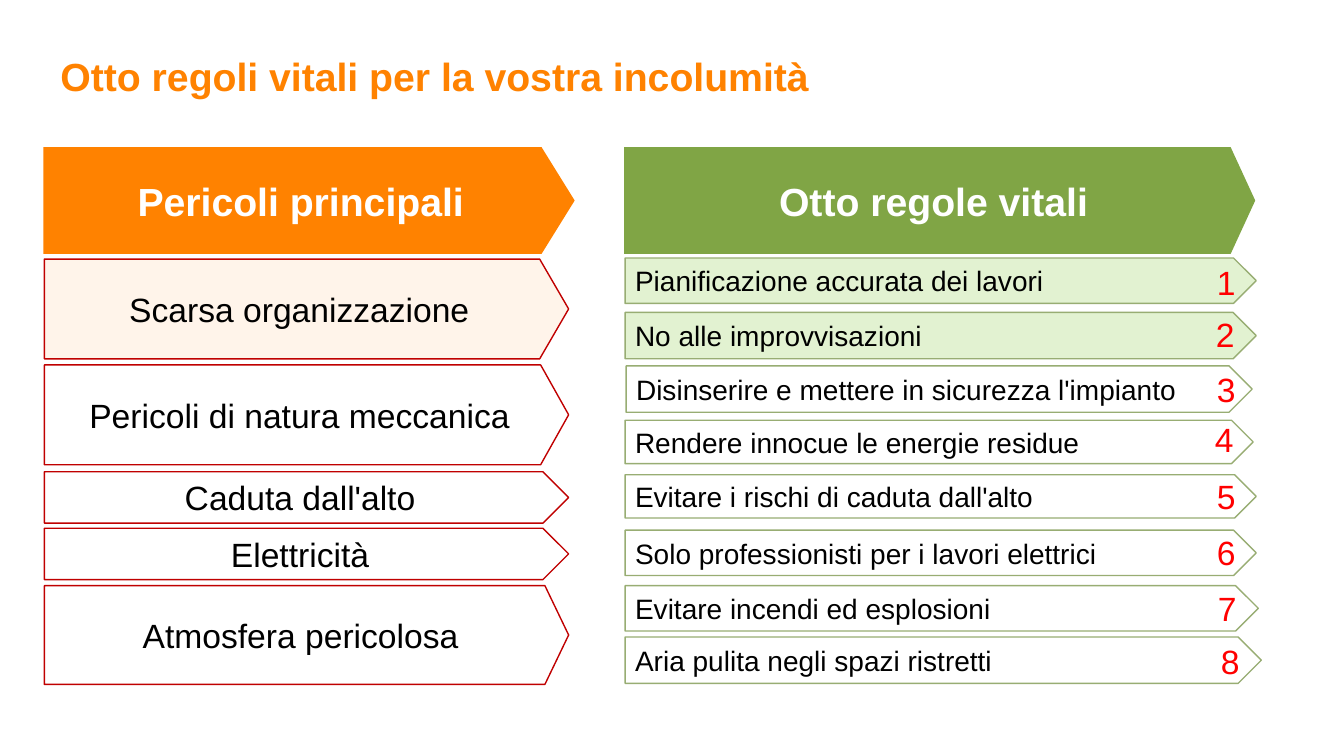
from pptx import Presentation
from pptx.dml.color import RGBColor
from pptx.enum.shapes import MSO_SHAPE
from pptx.enum.text import MSO_ANCHOR, PP_ALIGN
from pptx.util import Pt
from lxml import etree

PENTAGON = MSO_SHAPE.PENTAGON
MIDDLE, TOP = MSO_ANCHOR.MIDDLE, MSO_ANCHOR.TOP
LEFT, CENTER = PP_ALIGN.LEFT, PP_ALIGN.CENTER
PX = 9144  # 100 px to the inch
HANGING = 39 * PX
DRAWING_NS = "{http://schemas.openxmlformats.org/drawingml/2006/main}"

THEME = {
    "font": "Arial",
    "title_size": 28, "danger_size": 24, "rule_size": 20, "number_size": 24,
    "orange": "FF8200", "green": "80A545", "white": "FFFFFF", "black": "000000",
    "red": "FF0000", "danger_line": "C00000", "rule_line": "98AD73",
    "danger_tint": ("FFDAB3", 27), "rule_tint": ("92D050", 26),
}


def write(box, text, size, color, align=LEFT, anchor=TOP, bold=False):
    frame = box.text_frame
    frame.word_wrap = True
    frame.vertical_anchor = anchor
    para = frame.paragraphs[0]
    para.text = text
    para.alignment = align
    font = para.runs[0].font
    font.name, font.size, font.bold = THEME["font"], Pt(THEME[size]), bold
    font.color.rgb = RGBColor.from_string(THEME[color])
    return para


def add_arrow(left, top, width, height, point, fill=None, alpha=100, line=None):
    arrow = page.shapes.add_shape(PENTAGON, left * PX, top * PX, width * PX, height * PX)
    arrow.shadow.inherit = False
    arrow.adjustments[0] = point
    if fill:
        arrow.fill.solid()
        arrow.fill.fore_color.rgb = RGBColor.from_string(fill)
        if alpha < 100:
            color = arrow._element.spPr.find(f".//{DRAWING_NS}srgbClr")
            etree.SubElement(color, f"{DRAWING_NS}alpha").set("val", str(alpha * 1000))
    else:
        arrow.fill.background()
    if line:
        arrow.line.color.rgb = RGBColor.from_string(THEME[line])
        arrow.line.width = Pt(1)
    else:
        arrow.line.fill.background()
    return arrow


deck = Presentation()
deck.slide_width, deck.slide_height = 1333 * PX, 750 * PX
page = deck.slides.add_slide(deck.slide_layouts[6])

# Title
title = page.shapes.add_textbox(60 * PX, 52 * PX, 1213 * PX, 94 * PX)
frame = title.text_frame
frame.margin_left = frame.margin_right = frame.margin_top = frame.margin_bottom = 0
write(title, "Otto regoli vitali per la vostra incolumità", "title_size", "orange", bold=True)

# Column headers
headers = [
    ("Pericoli principali", 43, 527, 0.31, "orange"),
    ("Otto regole vitali", 619, 626, 0.23, "green"),
]
for text, left, width, point, color in headers:
    header = add_arrow(left, 146, width, 106, point, THEME[color])
    write(header, text, "title_size", "white", CENTER, MIDDLE, bold=True)

# Main dangers: text, top, height, point, tint
dangers = [
    ("Scarsa organizzazione", 257, 99, 0.29, THEME["danger_tint"]),
    ("Pericoli di natura meccanica", 362, 99, 0.28, ()),
    ("Caduta dall'alto", 468, 51, 0.5, ()),
    ("Elettricità", 524, 51, 0.5, ()),
    ("Atmosfera pericolosa", 581, 98, 0.24, ()),
]
for text, top, height, point, tint in dangers:
    danger = add_arrow(44, top, 520, height, point, *tint, line="danger_line")
    write(danger, text, "danger_size", "black", CENTER, MIDDLE)

# Vital rules: text, left, top, width, height, tint, number left, number top
rules = [
    ("Pianificazione accurata dei lavori", 620, 256, 626, 45, THEME["rule_tint"], 1197, 255),
    ("No alle improvvisazioni", 620, 310, 626, 46, THEME["rule_tint"], 1196, 307),
    ("Disinserire e mettere in sicurezza l'impianto", 621, 363, 621, 46, (), 1197, 361),
    ("Rendere innocue le energie residue", 620, 417, 623, 43, (), 1195, 411),
    ("Evitare i rischi di caduta dall'alto", 620, 471, 626, 43, (), 1197, 467),
    ("Solo professionisti per i lavori elettrici", 620, 526, 626, 45, (), 1197, 523),
    ("Evitare incendi ed esplosioni", 620, 581, 628, 45, (), 1198, 578),
    ("Aria pulita negli spazi ristretti", 620, 632, 631, 46, (), 1201, 631),
]
for number, (text, left, top, width, height, tint, number_left, number_top) in enumerate(rules, 1):
    rule = add_arrow(left, top, width, height, 0.5, *tint, line="rule_line")
    para = write(rule, text, "rule_size", "black", LEFT, MIDDLE)
    indents = para._p.get_or_add_pPr()
    indents.set("marL", str(HANGING))
    indents.set("indent", str(-HANGING))
    label = page.shapes.add_textbox(number_left * PX, number_top * PX, 61 * PX, 50 * PX)
    write(label, str(number), "number_size", "red")

deck.save("out.pptx")
